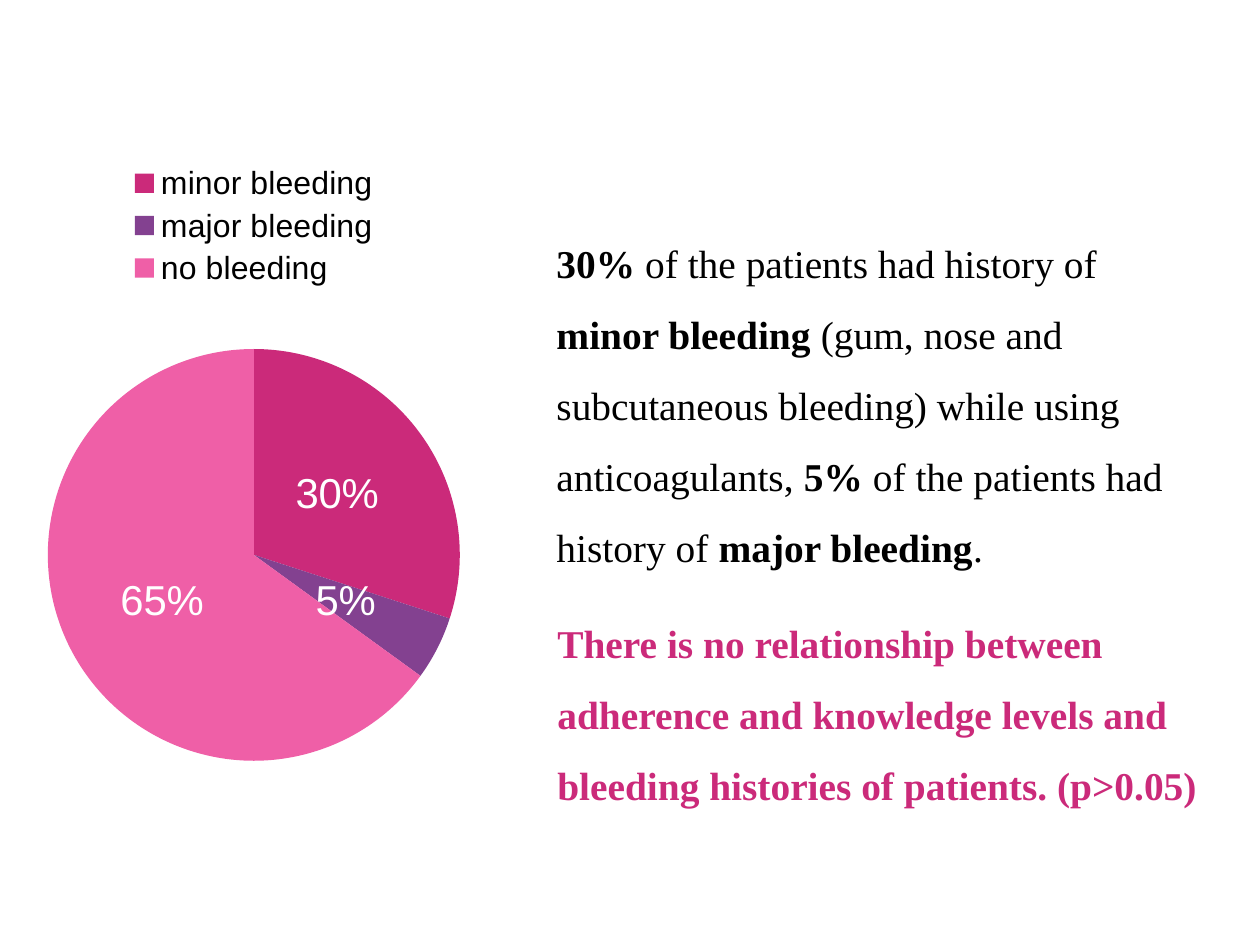
import pptx
import pptx.chart.data
import pptx.dml.color
import pptx.enum.chart
import pptx.enum.text
import pptx.oxml
import pptx.oxml.ns
import pptx.util
from pptx.util import Inches

MAGENTA = "CB2A7A"


def style_font(font, name, size, colour):
    font.name = name
    font.size = pptx.util.Pt(size)
    font.color.rgb = pptx.dml.color.RGBColor.from_string(colour)


deck = pptx.Presentation()
deck.slide_width = Inches(14.22)
deck.slide_height = Inches(10.67)
page = deck.slides.add_slide(deck.slide_layouts[6])

bleeding = [
    ("minor bleeding", 30, MAGENTA),
    ("major bleeding", 5, "834190"),
    ("no bleeding", 65, "EF5FA7"),
]
chart_data = pptx.chart.data.CategoryChartData()
chart_data.categories = [name for name, share, colour in bleeding]
chart_data.add_series("Bleeding history", [share for name, share, colour in bleeding])
chart = page.shapes.add_chart(
    pptx.enum.chart.XL_CHART_TYPE.PIE,
    Inches(0.5), Inches(1.72), Inches(4.73), Inches(6.94), chart_data,
).chart
chart.has_title = False
style_font(chart.font, "Roboto", 10, "000000")

chart.has_legend = True
chart.legend.position = pptx.enum.chart.XL_LEGEND_POSITION.TOP
chart.legend.include_in_layout = True
style_font(chart.legend.font, "Arial", 26, "000000")

pie = chart.plots[0]
pie.vary_by_categories = True
for index, (name, share, colour) in enumerate(bleeding):
    fill = pie.series[0].points[index].format.fill
    fill.solid()
    fill.fore_color.rgb = pptx.dml.color.RGBColor.from_string(colour)

pie.has_data_labels = True
labels = pie.data_labels
labels.show_percentage = True
labels.show_value = False
labels.number_format = "#,##0%"
labels.number_format_is_linked = False
labels.position = pptx.enum.chart.XL_LABEL_POSITION.CENTER
style_font(labels.font, "Arial", 34, "FFFFFF")

plot_area = chart.element.chart.plotArea
for old_layout in plot_area.findall(pptx.oxml.ns.qn("c:layout")):
    plot_area.remove(old_layout)
plot_area.insert(0, pptx.oxml.parse_xml(
    f'<c:layout {pptx.oxml.ns.nsdecls("c")}><c:manualLayout>'
    '<c:layoutTarget val="inner"/><c:xMode val="edge"/><c:yMode val="edge"/>'
    '<c:x val="0.005"/><c:y val="0.32"/><c:w val="0.99"/><c:h val="0.67"/>'
    '</c:manualLayout></c:layout>'
))

findings = [
    ("30%", True),
    (" of the patients had history of ", False),
    ("minor bleeding", True),
    (" (gum, nose and subcutaneous bleeding) while using anticoagulants, ", False),
    ("5%", True),
    (" of the patients had history of ", False),
    ("major bleeding", True),
    (".", False),
]
conclusion = [(
    "There is no relationship between adherence and knowledge levels and "
    "bleeding histories of patients. (p>0.05)", True,
)]
for left, top, width, height, colour, wording in [
    (6.22, 0.49, 7.48, 7.89, "000000", findings),
    (6.23, 6.86, 7.45, 2.13, MAGENTA, conclusion),
]:
    box = page.shapes.add_textbox(Inches(left), Inches(top), Inches(width), Inches(height))
    frame = box.text_frame
    frame.word_wrap = True
    frame.vertical_anchor = pptx.enum.text.MSO_ANCHOR.MIDDLE
    frame.margin_left = frame.margin_right = Inches(0.06)
    frame.margin_top = frame.margin_bottom = Inches(0.06)
    para = frame.paragraphs[0]
    para.line_spacing = 1.5
    for text, bold in wording:
        span = para.add_run()
        span.text = text
        span.font.bold = bold
        style_font(span.font, "Times New Roman", 32, colour)

deck.save("out.pptx")
